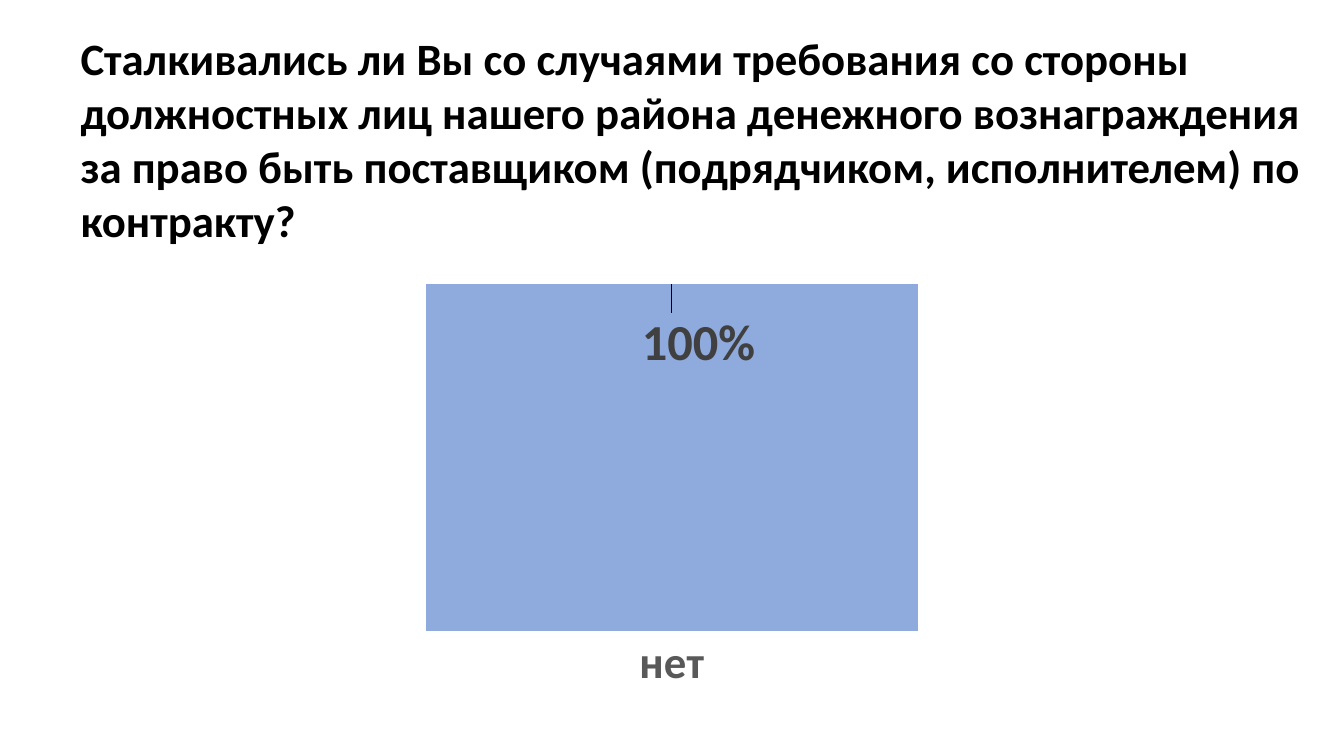
from dataclasses import dataclass

from lxml.etree import SubElement
from pptx import Presentation
from pptx.chart.data import CategoryChartData
from pptx.dml.color import RGBColor
from pptx.enum.chart import XL_CHART_TYPE, XL_LABEL_POSITION, XL_TICK_MARK
from pptx.enum.text import MSO_AUTO_SIZE
from pptx.oxml import parse_xml
from pptx.oxml.ns import nsdecls, qn
from pptx.util import Cm, Pt


@dataclass(frozen=True)
class Theme:
    font: str = "Calibri"
    text: str = "000000"
    axis: str = "595959"
    label: str = "404040"
    bar: str = "8FAADC"
    title_size: int = 32
    axis_size: int = 32
    chart_size: int = 28
    label_size: int = 36


class SlideBuilder:
    def __init__(self, slide, theme):
        self.s = slide
        self.theme = theme

    def style(self, font, size, color):
        font.name = self.theme.font
        font.size = Pt(size)
        font.bold = True
        font.color.rgb = RGBColor.from_string(color)

    def layout(self, **values):
        """Manual chart layout, as fractions of the chart area."""
        layout = parse_xml(f"<c:layout {nsdecls('c')}><c:manualLayout/></c:layout>")
        for tag, value in values.items():
            SubElement(layout[0], qn(f"c:{tag}")).set("val", str(value))
        return layout

    def title(self, text, *box):
        sp = self.s.shapes.add_textbox(*map(Cm, box))
        tf = sp.text_frame
        tf.word_wrap = True
        tf.auto_size = MSO_AUTO_SIZE.SHAPE_TO_FIT_TEXT
        tf.text = text
        for r in tf.paragraphs[0].runs:
            self.style(r.font, self.theme.title_size, self.theme.text)

    def column_chart(self, categories, values, *box):
        theme = self.theme
        data = CategoryChartData(number_format="0%")
        data.categories = categories
        data.add_series("Series 1", values)
        chart = self.s.shapes.add_chart(
            XL_CHART_TYPE.COLUMN_CLUSTERED, *map(Cm, box), data).chart
        chart.has_legend = False
        chart.has_title = False
        self.style(chart.font, theme.chart_size, theme.text)

        # Axes
        cat = chart.category_axis
        cat.major_tick_mark = XL_TICK_MARK.NONE
        cat.format.line.fill.background()
        self.style(cat.tick_labels.font, theme.axis_size, theme.axis)
        val = chart.value_axis
        val.visible = False
        val.has_major_gridlines = False
        val.minimum_scale, val.maximum_scale = 0, 1.2

        # Plot area
        area = chart.plots[0]
        area.gap_width = 75
        area.vary_by_categories = False
        plot_area = chart._chartSpace.chart.plotArea
        for old in plot_area.findall(qn("c:layout")):
            plot_area.remove(old)
        plot_area.insert(0, self.layout(
            layoutTarget="inner", xMode="edge", yMode="edge",
            x=0.02, y=0.02, w=0.96, h=0.84))

        # Bars and their labels, shifted down into the bar
        series = area.series[0]
        series.format.fill.solid()
        series.format.fill.fore_color.rgb = RGBColor.from_string(theme.bar)
        for i in range(len(values)):
            label = series.points[i].data_label
            self.style(label.font, theme.label_size, theme.label)
            label.position = XL_LABEL_POSITION.OUTSIDE_END
        for idx in series._element.iterfind(f".//{qn('c:dLbl')}/{qn('c:idx')}"):
            idx.addnext(self.layout(x=0.03, y=0.19))


def main():
    prs = Presentation()
    prs.slide_width, prs.slide_height = Cm(33.87), Cm(19.05)
    slide = SlideBuilder(prs.slides.add_slide(prs.slide_layouts[6]), Theme())

    # Survey question
    slide.title(
        "Сталкивались ли Вы со случаями требования со стороны должностных лиц "
        "нашего района денежного вознаграждения за право быть поставщиком "
        "(подрядчиком, исполнителем) по контракту?",
        1.78, 0.66, 32.08, 5.74)

    # Answers
    slide.column_chart(["нет"], [1], 5.64, 5.16, 22.58, 12.5)

    prs.save("out.pptx")


if __name__ == "__main__":
    main()
